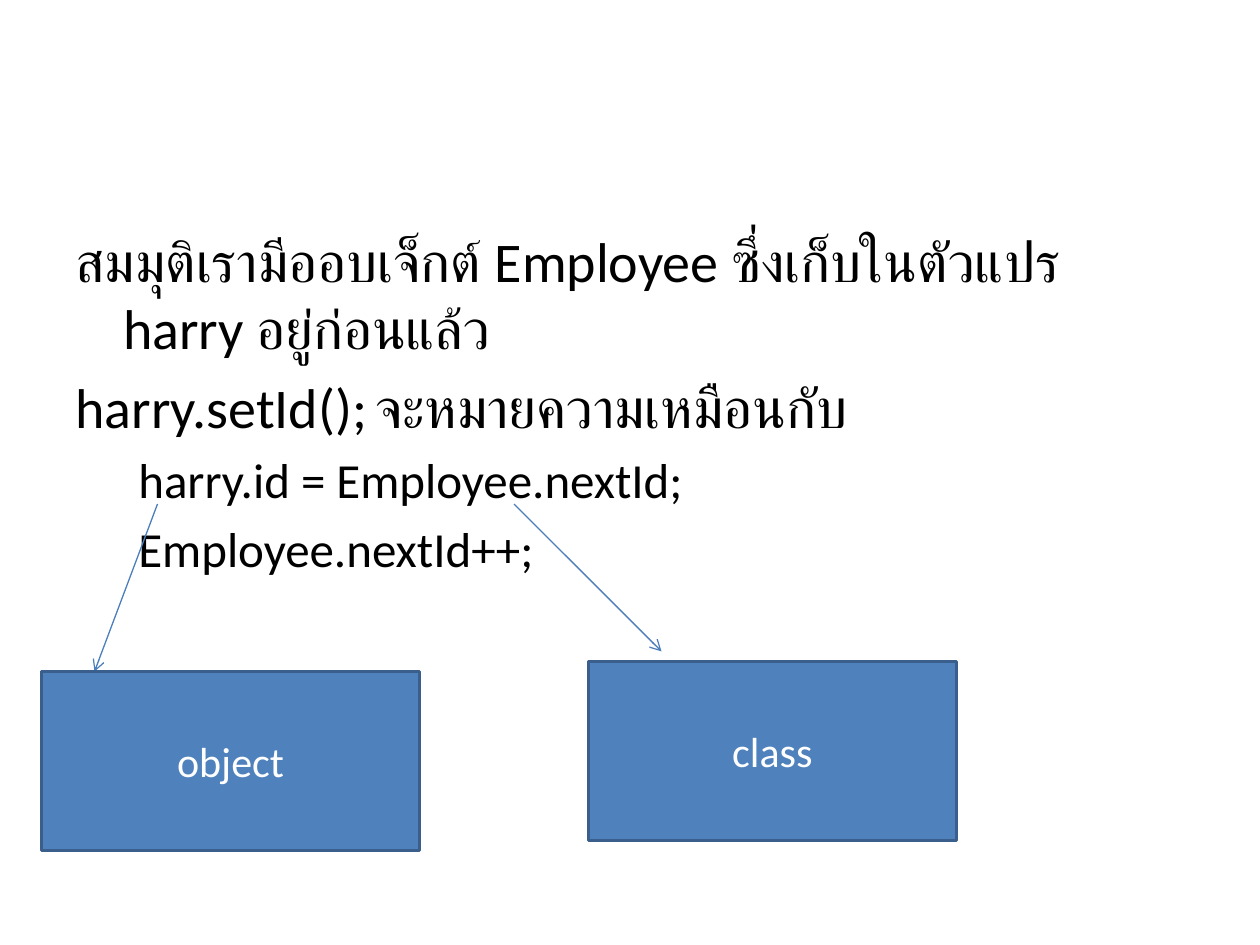
from lxml.etree import SubElement
from pptx import Presentation
from pptx.dml.color import RGBColor
from pptx.enum.shapes import MSO_CONNECTOR as Connector, MSO_SHAPE as Shape
from pptx.enum.text import MSO_ANCHOR as Anchor, PP_ALIGN as Align
from pptx.oxml.ns import qn
from pptx.util import Inches, Pt

BLACK = RGBColor(0x00, 0x00, 0x00)
WHITE = RGBColor(0xFF, 0xFF, 0xFF)
BLUE = RGBColor(0x4F, 0x81, 0xBD)
BORDER = RGBColor(0x3A, 0x5F, 0x8C)
ARROW = RGBColor(0x4B, 0x7E, 0xBC)


def style_font(paragraph, size, color):
    paragraph.font.name = "Calibri"
    paragraph.font.size = Pt(size)
    paragraph.font.color.rgb = color


deck = Presentation()
deck.slide_width, deck.slide_height = Inches(10), Inches(7.5)
page = deck.slides.add_slide(deck.slide_layouts[6])

body = page.shapes.add_textbox(Inches(0.5), Inches(1.75), Inches(9), Inches(4.95))
frame = body.text_frame
frame.word_wrap = True
lines = [
    ("สมมุติเรามีออบเจ็กต์ Employee ซึ่งเก็บในตัวแปร harry อยู่ก่อนแล้ว", 0),
    ("harry.setId();\tจะหมายความเหมือนกับ", 0),
    ("harry.id = Employee.nextId;", 1),
    ("Employee.nextId++;", 1),
]
levels = [(32, 0.38, -0.38), (28, 0.81, -0.31)]
for index, (text, level) in enumerate(lines):
    para = frame.paragraphs[0] if index == 0 else frame.add_paragraph()
    size, margin, indent = levels[level]
    para.text = text
    para.level = level
    para.space_before = Pt(size * 0.2)
    style_font(para, size, BLACK)
    properties = para._p.get_or_add_pPr()
    properties.set("marL", str(Inches(margin)))
    properties.set("indent", str(Inches(indent)))
    if "\t" in text:
        stops = properties.makeelement(qn("a:tabLst"), {})
        SubElement(stops, qn("a:tab"), pos=str(Inches(2.72)), algn="l")
        properties.find(qn("a:defRPr")).addprevious(stops)

for start_x, end_x, end_y in [(1.25, 0.75, 5.33), (4.08, 5.25, 5.17)]:
    arrow = page.shapes.add_connector(
        Connector.STRAIGHT, Inches(start_x), Inches(4), Inches(end_x), Inches(end_y))
    arrow.line.color.rgb = ARROW
    arrow.line.width = Pt(0.75)
    SubElement(arrow.line._get_or_add_ln(), qn("a:tailEnd"), type="arrow")
    SubElement(arrow._element.spPr, qn("a:effectLst"))

for label, left, top, width in [("object", 0.33, 5.33, 3), ("class", 4.67, 5.25, 2.92)]:
    box = page.shapes.add_shape(
        Shape.RECTANGLE, Inches(left), Inches(top), Inches(width), Inches(1.42))
    box.shadow.inherit = False
    box.fill.solid()
    box.fill.fore_color.rgb = BLUE
    box.line.color.rgb = BORDER
    box.line.width = Pt(2)
    box.text_frame.vertical_anchor = Anchor.MIDDLE
    para = box.text_frame.paragraphs[0]
    para.text = label
    para.alignment = Align.CENTER
    style_font(para, 24, WHITE)

deck.save("out.pptx")
